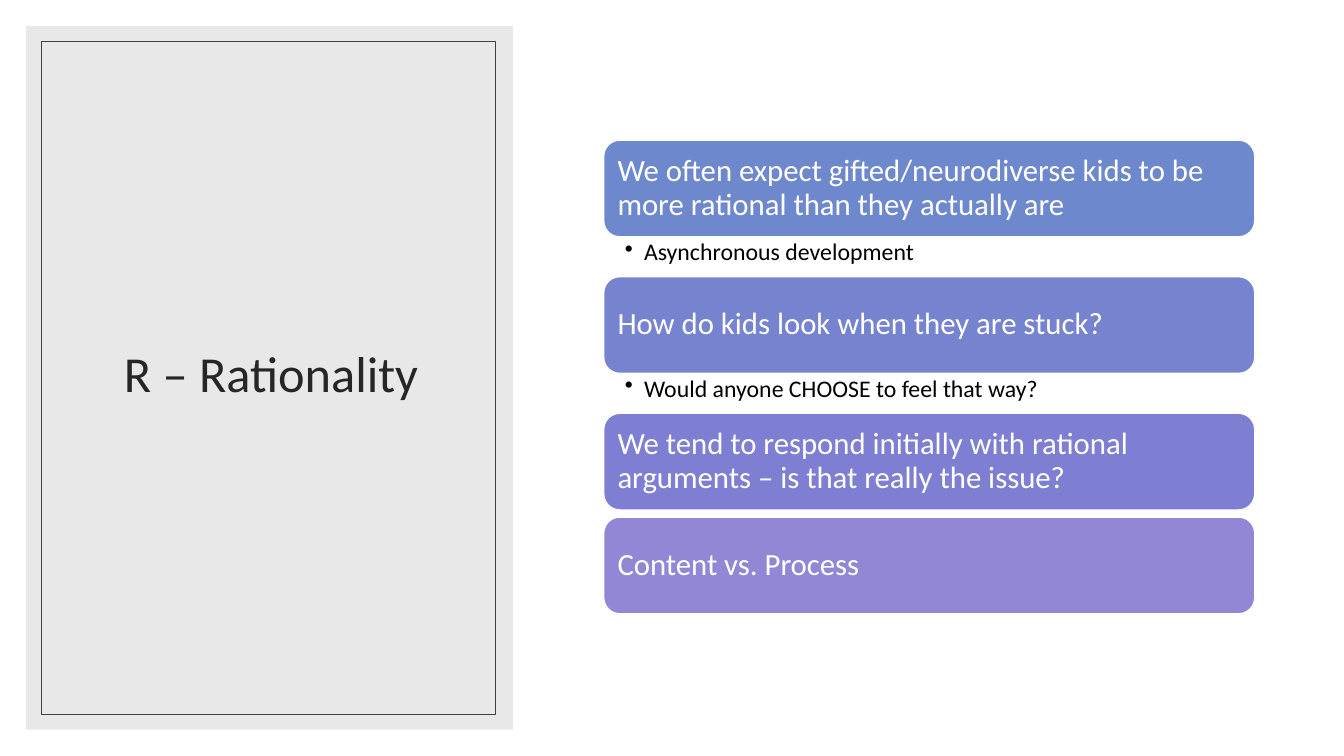
from pptx import Presentation
from pptx.dml.color import RGBColor
from pptx.enum.shapes import MSO_SHAPE as Shape
from pptx.enum.text import MSO_ANCHOR as Anchor, PP_ALIGN as Align
from pptx.oxml.ns import qn
from pptx.util import Pt
from lxml.etree import SubElement

PX = 4572
FONT = "Calibri"
WHITE = RGBColor(255, 255, 255)
BLACK = RGBColor(0, 0, 0)
PANEL_GREY = RGBColor(0xD9, 0xD9, 0xD9)
FRAME_GREY = RGBColor(0x40, 0x40, 0x40)
TITLE_GREY = RGBColor(0x26, 0x26, 0x26)

TITLE = "R – Rationality"
POINTS = [
    ("We often expect gifted/neurodiverse kids to be more rational than they actually are",
     "Asynchronous development", RGBColor(0x6D, 0x88, 0xCC)),
    ("How do kids look when they are stuck?",
     "Would anyone CHOOSE to feel that way?", RGBColor(0x76, 0x83, 0xCF)),
    ("We tend to respond initially with rational arguments – is that really the issue?",
     None, RGBColor(0x7E, 0x7F, 0xD2)),
    ("Content vs. Process", None, RGBColor(0x91, 0x87, 0xD5)),
]
HEADING_HEIGHT = 192
DETAIL_HEIGHT = 79
GAP = 14


def px(*lengths):
    return [length * PX for length in lengths]


def add_block(page, kind, box, fill=None, line=None, line_width=1):
    block = page.shapes.add_shape(kind, *px(*box))
    block.shadow.inherit = False
    if fill is None:
        block.fill.background()
    else:
        block.fill.solid()
        block.fill.fore_color.rgb = fill
    if line is None:
        block.line.fill.background()
    else:
        block.line.color.rgb = line
        block.line.width = Pt(line_width)
    return block


def write(shape, text, size, color, insets, anchor=Anchor.MIDDLE, align=Align.LEFT):
    frame = shape.text_frame
    frame.word_wrap = True
    frame.vertical_anchor = anchor
    (frame.margin_left, frame.margin_top,
     frame.margin_right, frame.margin_bottom) = px(*insets)
    para = frame.paragraphs[0]
    para.text = text
    para.alignment = align
    para.line_spacing = 0.9
    para.font.name = FONT
    para.font.size = Pt(size)
    para.font.color.rgb = color
    return para


def add_bullet(para, indent):
    properties = para._p.get_or_add_pPr()
    properties.set("marL", str(indent * PX))
    properties.set("indent", str(-indent * PX))
    bullet = SubElement(properties, qn("a:buChar"))
    bullet.set("char", "•")
    properties.insert_element_before(bullet, "a:tabLst", "a:defRPr", "a:extLst")


def add_title_panel(page, box):
    left, top, width, height = box
    title = page.shapes.title
    panel = add_block(page, Shape.RECTANGLE, box, fill=PANEL_GREY)
    color = panel.fill._xPr.find(qn("a:solidFill"))[0]
    SubElement(color, qn("a:alpha")).set("val", "60000")
    title.element.addprevious(panel.element)
    title.left, title.top, title.width, title.height = px(
        left + 74, top + 70, width - 142, height - 148)
    write(title, TITLE, 36, TITLE_GREY, (20, 10, 20, 10), align=Align.CENTER)
    add_block(page, Shape.RECTANGLE, (left + 30, top + 30, width - 64, height - 60),
              line=FRAME_GREY, line_width=0.5)


def add_points(page, box):
    left, top, width = box
    for heading, detail, color in POINTS:
        bar = add_block(page, Shape.ROUNDED_RECTANGLE,
                        (left, top, width, HEADING_HEIGHT), color, WHITE)
        write(bar, heading, 22, WHITE, (18, 18, 18, 18))
        top += HEADING_HEIGHT
        if detail:
            note = page.shapes.add_textbox(*px(left, top, width, DETAIL_HEIGHT))
            para = write(note, detail, 17, BLACK, (42, 6, 34, 6), Anchor.TOP)
            add_bullet(para, 38)
            top += DETAIL_HEIGHT
        else:
            top += GAP


def main():
    deck = Presentation()
    deck.slide_width, deck.slide_height = px(2667, 1500)
    page = deck.slides.add_slide(deck.slide_layouts[5])
    add_title_panel(page, (52, 52, 966, 1396))
    add_points(page, (1198, 278, 1292))
    deck.save("out.pptx")


if __name__ == "__main__":
    main()
